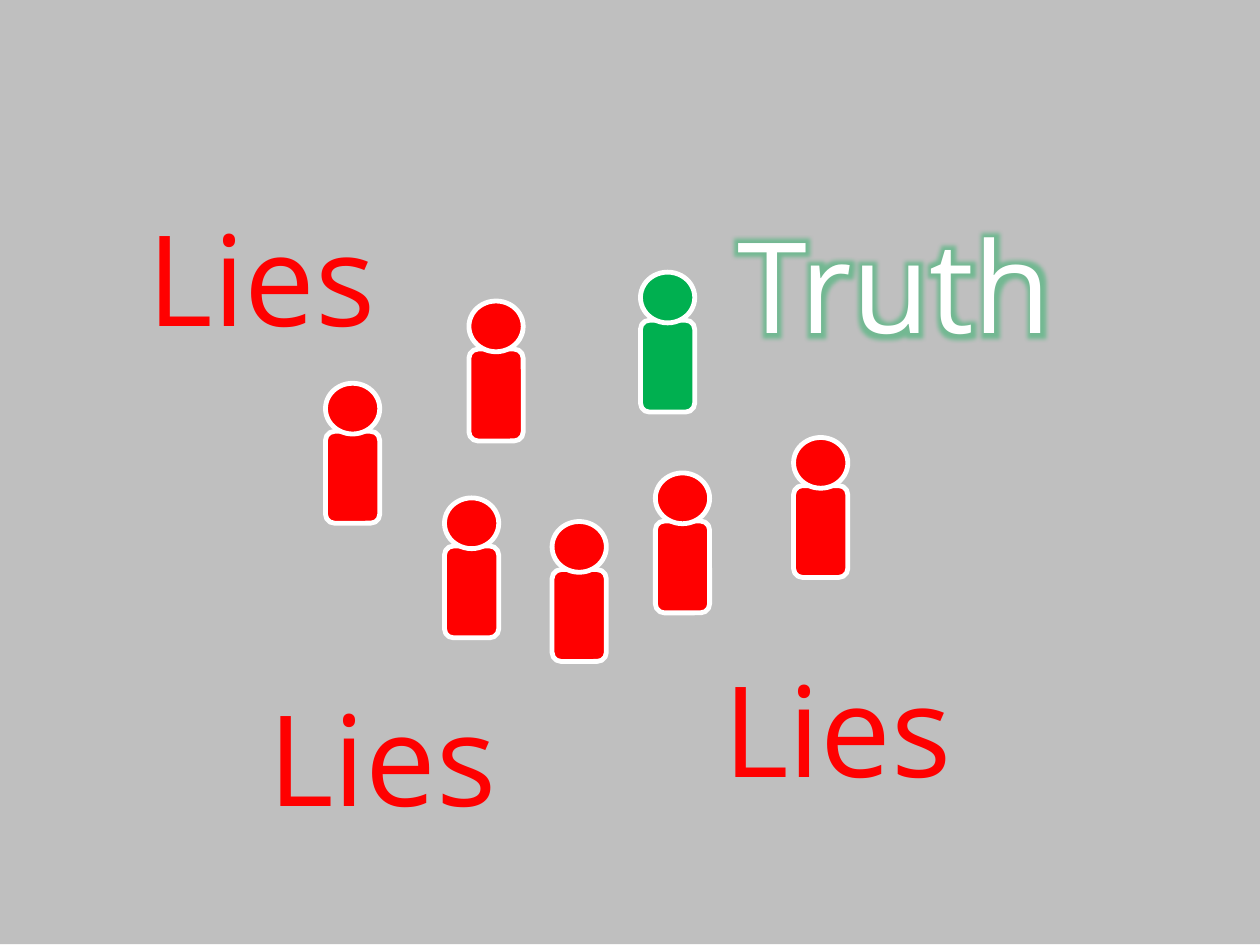
from lxml import etree
from pptx import Presentation
from pptx.dml.color import RGBColor
from pptx.enum.shapes import MSO_SHAPE
from pptx.enum.text import MSO_AUTO_SIZE, PP_ALIGN
from pptx.oxml import parse_xml
from pptx.util import Pt

RECT = MSO_SHAPE.RECTANGLE
ROUND = MSO_SHAPE.ROUNDED_RECTANGLE
OVAL = MSO_SHAPE.OVAL
GROW = MSO_AUTO_SIZE.SHAPE_TO_FIT_TEXT
MID = PP_ALIGN.CENTER

RED, GREEN, WHITE, GRAY = "FF0000", "00B050", "FFFFFF", "BFBFBF"
NS = "http://schemas.openxmlformats.org/drawingml/2006/main"
GLOW = (f'<a:effectLst xmlns:a="{NS}"><a:glow rad="{Pt(8)}">'
        f'<a:srgbClr val="{GREEN}"><a:alpha val="40000"/></a:srgbClr>'
        '</a:glow></a:effectLst>')


def rgb(code):
    return RGBColor.from_string(code)


def draw(home, kind, box, tint):
    shape = home.add_shape(kind, *map(Pt, box))
    shape.shadow.inherit = False
    shape.fill.solid()
    shape.fill.fore_color.rgb = rgb(tint)
    return shape


deck = Presentation()
deck.slide_width, deck.slide_height = Pt(720), Pt(540)
slide = deck.slides.add_slide(deck.slide_layouts[6])

back = draw(slide.shapes, RECT, (0, -0.5, 720, 540), GRAY)
back.line.fill.background()

crowd = [
    (366, 155.5, GREEN),
    (268, 172, RED),
    (186, 219, RED),
    (254, 284.5, RED),
    (315.5, 298, RED),
    (374.5, 270.25, RED),
    (453.5, 250, RED),
]
for left, top, tint in crowd:
    group = slide.shapes.add_group_shape()
    parts = [
        (ROUND, (left, top + 27.5, 31, 52.5)),
        (OVAL, (left, top, 31, 29)),
    ]
    for kind, box in parts:
        part = draw(group.shapes, kind, box, tint)
        part.line.color.rgb = rgb(WHITE)
        part.line.width = Pt(2.75)

words = [
    ("Truth", 368, 115.25, 286, WHITE),
    ("Lies", 100, 385.25, 237, RED),
    ("Lies", 360, 368.5, 237, RED),
    ("Lies", 31, 111, 237, RED),
]
style = {"size": Pt(72), "name": "Open Sans"}
for word, left, top, width, tint in words:
    label = slide.shapes.add_textbox(Pt(left), Pt(top), Pt(width), Pt(94.5))
    frame = label.text_frame
    frame.word_wrap = True
    frame.auto_size = GROW
    para = frame.paragraphs[0]
    para.alignment = MID
    run = para.add_run()
    run.text = word
    for key, value in style.items():
        setattr(run.font, key, value)
    run.font.color.rgb = rgb(tint)
    if word == "Truth":
        fill = run._r.rPr.find(etree.QName(NS, "solidFill"))
        fill.addnext(parse_xml(GLOW))

deck.save("out.pptx")
